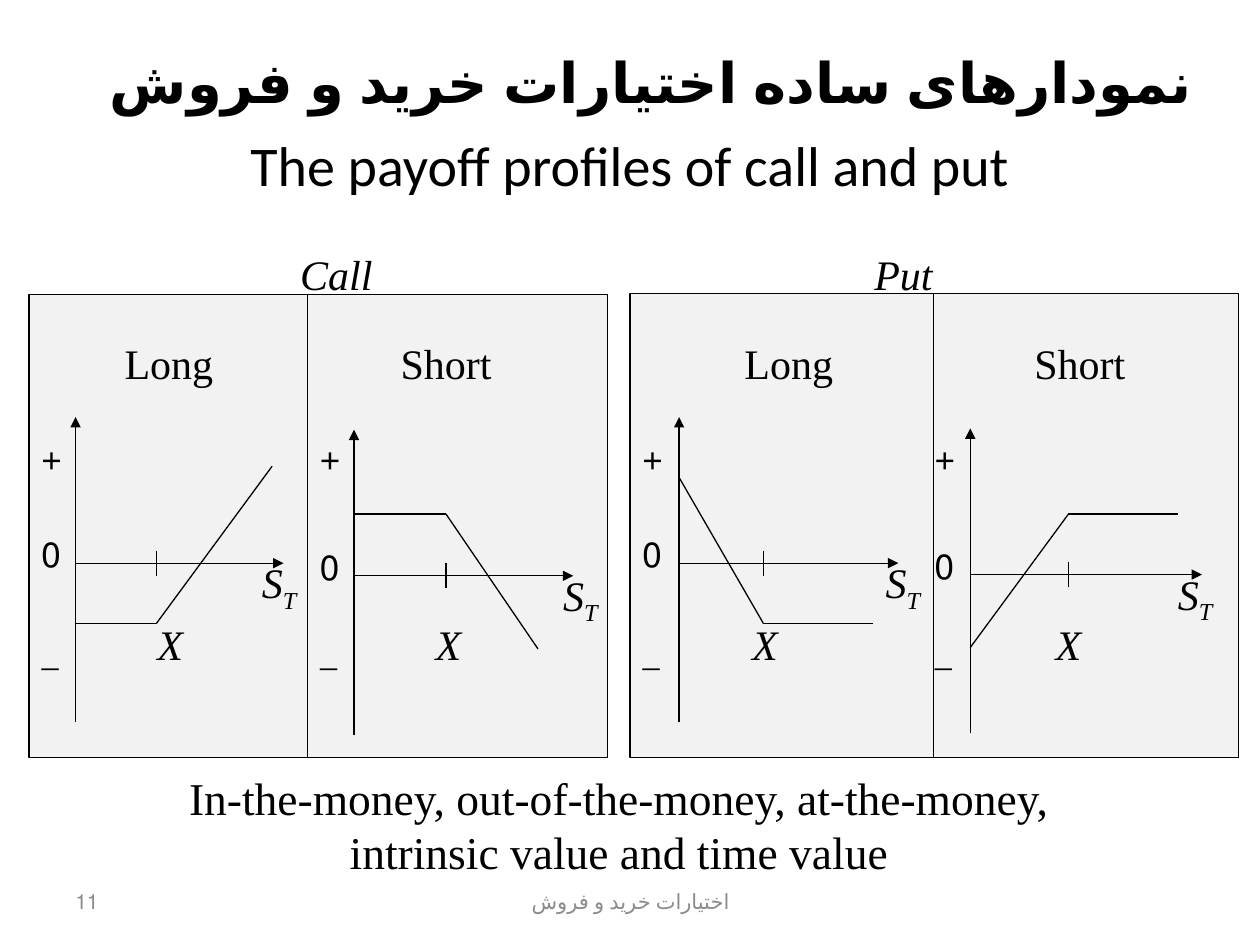
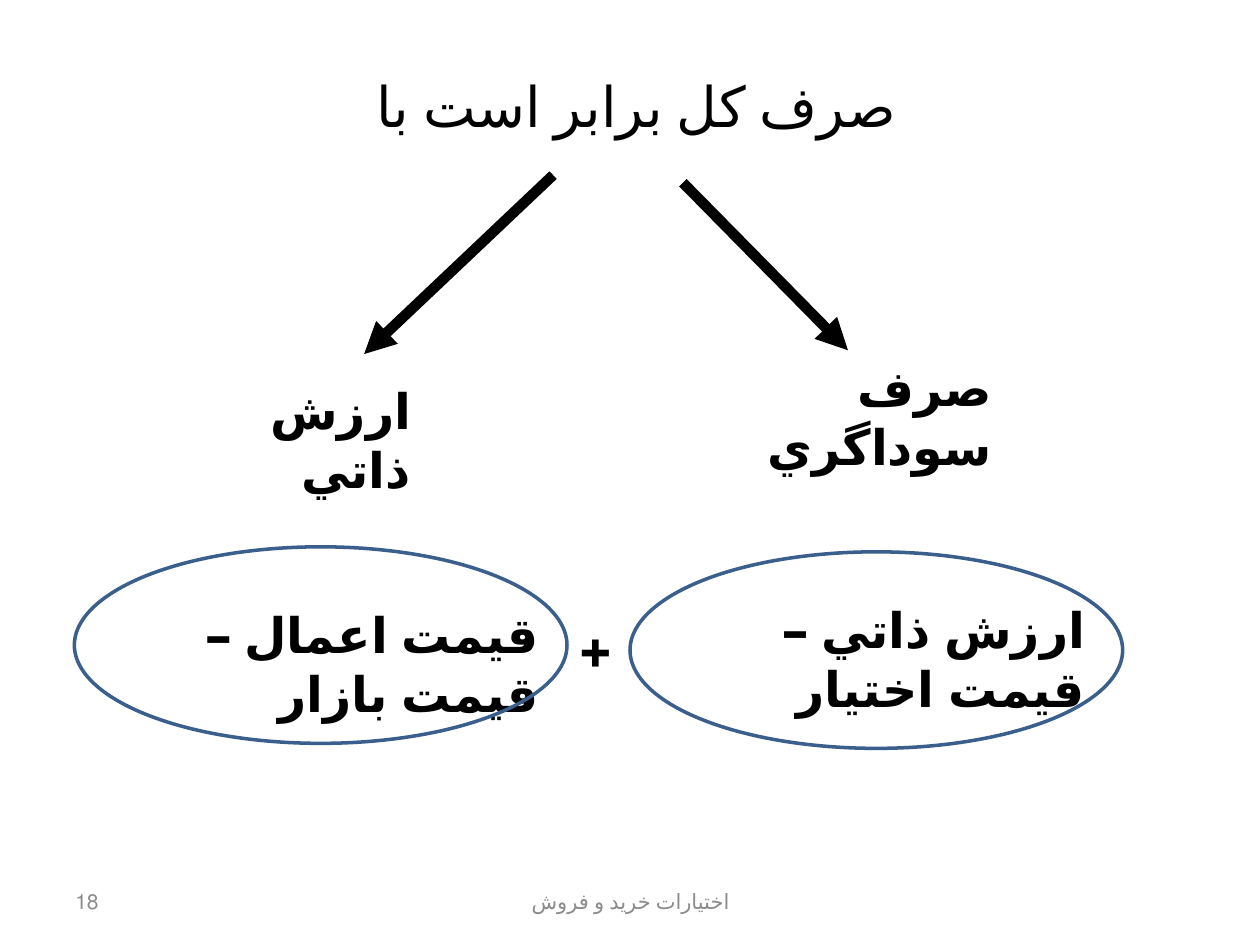
from itertools import pairwise

from lxml.etree import SubElement
from pptx import Presentation
from pptx.dml.color import RGBColor
from pptx.enum.lang import MSO_LANGUAGE_ID
from pptx.enum.shapes import MSO_CONNECTOR, MSO_SHAPE
from pptx.enum.text import MSO_ANCHOR, PP_ALIGN
from pptx.oxml.ns import qn
from pptx.util import Inches, Pt

BLACK, GREY, PANEL_FILL, ELLIPSE_LINE = "000000", "8C8C8C", "F2F2F2", "3A5F8C"
SANS, SERIF = "Calibri", "Times New Roman"
LEFT, CENTER, RIGHT = PP_ALIGN.LEFT, PP_ALIGN.CENTER, PP_ALIGN.RIGHT
FOOTER = "اختیارات خرید و فروش"

PAYOFF_TITLE = "نمودارهای ساده اختیارات خرید و فروش"
PAYOFF_SUBTITLE = "The payoff profiles of call and put"
PAYOFF_TERMS = ("In-the-money, out-of-the-money, at-the-money, "
                "intrinsic value and time value")

# Each payoff runs through three points; the middle one is at the strike X.
PANELS = [
    dict(name="Call", name_box=(1.92, 1.92, 1.5, 0.5),
         frame=(0.23, 2.34, 4.59, 3.67), divider=2.44,
         sign_width=0.37, letter_width=0.55, heading_width=1.1,
         positions=[
             dict(name="Long", left=0.23, heading=0.79, strike=1.15, price=1.98,
                  zero=4.47, axis_end=2.25,
                  payoff=[(0.6, 4.95), (1.24, 4.95), (2.16, 3.7)]),
             dict(name="Short", left=2.44, heading=2.99, strike=3.36, price=4.37,
                  zero=4.57, axis_end=4.55,
                  payoff=[(2.81, 4.08), (3.54, 4.08), (4.27, 5.15)]),
         ]),
    dict(name="Put", name_box=(6.67, 1.92, 1, 0.5),
         frame=(5, 2.33, 4.83, 3.68), divider=7.41,
         sign_width=0.39, letter_width=0.58, heading_width=1.16,
         positions=[
             dict(name="Long", left=5, heading=5.68, strike=5.87, price=6.93,
                  zero=4.47, axis_end=7.13, heading_fill=PANEL_FILL,
                  payoff=[(5.39, 3.79), (6.06, 4.95), (6.93, 4.95)]),
             dict(name="Short", left=7.32, heading=7.99, strike=8.28, price=9.25,
                  zero=4.56, axis_end=9.54,
                  payoff=[(7.7, 5.14), (8.48, 4.08), (9.35, 4.08)]),
         ]),
]

PREMIUM_TITLE = "صرف كل برابر است با "
PREMIUM_PARTS = [
    ("صرف سوداگري", (5.29, 2.79, 2.68, 0.57)),
    ("ارزش ذاتي", (1.48, 2.97, 1.88, 0.57)),
    ("قيمت اعمال – قيمت بازار", (0.78, 4.75, 3.59, 0.57)),
    ("ارزش ذاتي – قيمت اختیار", (5.04, 4.71, 3.67, 0.57)),
]
PREMIUM_ARROWS = [((4.39, 1.39), (2.89, 2.81)), ((5.42, 1.45), (6.73, 2.78))]
FORMULA_ELLIPSES = [(0.59, 4.34, 3.91, 1.56), (5, 4.38, 3.91, 1.56)]


def color(value):
    return RGBColor.from_string(value)


def is_persian(text):
    return any("\u0600" <= letter <= "ۿ" for letter in text)


def add_text(slide, text, box, size, font=SERIF, align=CENTER, bold=False,
             italic=False, fill=BLACK, anchor=MSO_ANCHOR.TOP, subscript="",
             background=None):
    """Add a one-paragraph, right-to-left text box."""
    textbox = slide.shapes.add_textbox(*map(Inches, box))
    if background:
        textbox.fill.solid()
        textbox.fill.fore_color.rgb = color(background)
    frame = textbox.text_frame
    frame.word_wrap = True
    frame.vertical_anchor = anchor
    paragraph = frame.paragraphs[0]
    paragraph.add_run().text = text
    if subscript:
        lowered = paragraph.add_run()
        lowered.text = subscript
        lowered._r.get_or_add_rPr().set("baseline", "-25000")
    paragraph.alignment = align
    paragraph._p.get_or_add_pPr().set("rtl", "1")
    for run in paragraph.runs:
        run.font.name, run.font.size = font, Pt(size)
        run.font.bold, run.font.italic = bold, italic
        run.font.color.rgb = color(fill)
        if is_persian(run.text):
            run.font.language_id = MSO_LANGUAGE_ID.FARSI


def add_line(slide, start, end, width=0.75, arrow=False):
    line = slide.shapes.add_connector(
        MSO_CONNECTOR.STRAIGHT, *map(Inches, (*start, *end)))
    line.line.color.rgb = color(BLACK)
    line.line.width = Pt(width)
    if arrow:
        SubElement(line.line._get_or_add_ln(), qn("a:tailEnd"), type="triangle")
    SubElement(line._element.spPr, qn("a:effectLst"))


def add_outline(slide, kind, box, line, width, fill=None):
    shape = slide.shapes.add_shape(kind, *map(Inches, box))
    shape.shadow.inherit = False
    if fill:
        shape.fill.solid()
        shape.fill.fore_color.rgb = color(fill)
    else:
        shape.fill.background()
    shape.line.color.rgb = color(line)
    shape.line.width = Pt(width)


def add_slide(presentation, number):
    """Add a blank slide with its footer and number."""
    slide = presentation.slides.add_slide(presentation.slide_layouts[6])
    for text, box, align in [(number, (0.5, 6.95, 2.33, 0.4), LEFT),
                             (FOOTER, (3.42, 6.95, 3.17, 0.4), CENTER)]:
        add_text(slide, text, box, 12, SANS, align, fill=GREY,
                 anchor=MSO_ANCHOR.MIDDLE)
    return slide


def draw_position(slide, panel, position):
    """Draw the axes, payoff line and labels of one long or short position."""
    payoff, zero, left = position["payoff"], position["zero"], position["left"]
    axis, strike = payoff[0][0], payoff[1][0]
    sign, letter = panel["sign_width"], panel["letter_width"]

    add_line(slide, (axis, zero + 1.26), (axis, zero - 1.16), arrow=True)
    add_line(slide, (axis, zero), (position["axis_end"], zero), arrow=True)
    add_line(slide, (strike, zero - 0.1), (strike, zero + 0.1))
    for start, end in pairwise(payoff):
        add_line(slide, start, end)

    add_text(slide, position["name"],
             (position["heading"], 2.63, panel["heading_width"], 0.58), 24,
             background=position.get("heading_fill"))
    for mark, top, width in [("+", 3.4, sign), ("0", zero - 0.29, letter),
                             ("_", 4.95, sign)]:
        add_text(slide, mark, (left, top, width, 0.5), 20, align=LEFT)
    add_text(slide, "X", (position["strike"], 4.86, letter, 0.58), 24,
             align=LEFT, italic=True)
    add_text(slide, "S", (position["price"], zero - 0.1, letter, 0.58), 24,
             align=LEFT, italic=True, subscript="T")


def build_payoff_slide(presentation):
    slide = add_slide(presentation, "11")
    add_text(slide, PAYOFF_TITLE, (0.67, 0.33, 9, 0.63), 32, bold=True)
    add_text(slide, PAYOFF_SUBTITLE, (0.75, 0.99, 8.5, 0.7), 32, SANS)
    for panel in PANELS:
        add_text(slide, panel["name"], panel["name_box"], 24, italic=True)
        add_outline(slide, MSO_SHAPE.RECTANGLE, panel["frame"], BLACK, 0.75,
                    PANEL_FILL)
        _, top, _, height = panel["frame"]
        add_line(slide, (panel["divider"], top), (panel["divider"], top + height))
        for position in panel["positions"]:
            draw_position(slide, panel, position)
    add_text(slide, PAYOFF_TERMS, (1.33, 6.06, 7.17, 0.97), 26)


def build_premium_slide(presentation):
    slide = add_slide(presentation, "18")
    add_text(slide, PREMIUM_TITLE, (0.5, 0.52, 9, 0.7), 32, SANS)
    for start, end in PREMIUM_ARROWS:
        add_line(slide, start, end, width=6, arrow=True)
    for part, box in PREMIUM_PARTS:
        add_text(slide, part, box, 28, SANS, RIGHT, bold=True)
    add_text(slide, "+", (4.41, 4.8, 0.55, 0.64), 32, SANS, RIGHT, bold=True)
    for box in FORMULA_ELLIPSES:
        add_outline(slide, MSO_SHAPE.OVAL, box, ELLIPSE_LINE, 2)


def main():
    presentation = Presentation()
    presentation.slide_width, presentation.slide_height = Inches(10), Inches(7.5)
    build_payoff_slide(presentation)
    build_premium_slide(presentation)
    presentation.save("out.pptx")


if __name__ == "__main__":
    main()
